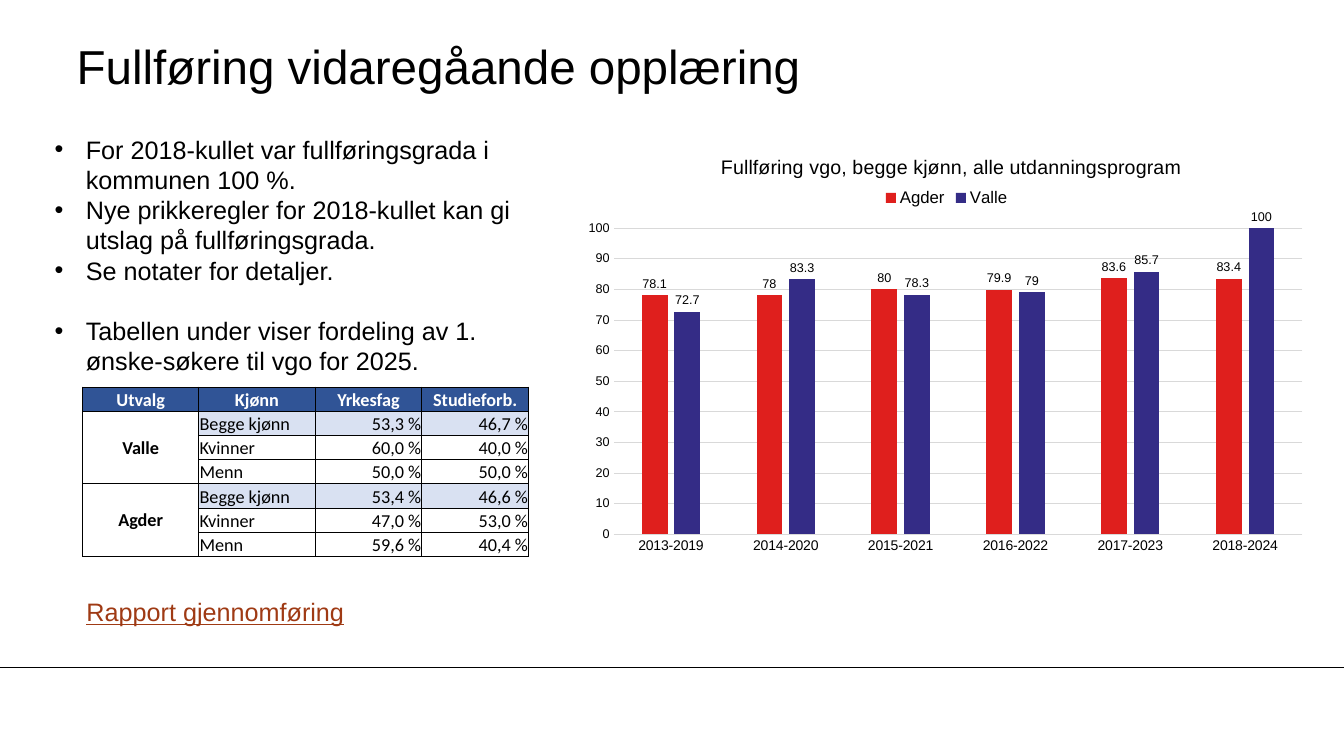
"""Build the slide on completion of upper secondary education."""
import pptx
import pptx.chart.data
import pptx.dml.color
import pptx.enum.chart
import pptx.enum.shapes
import pptx.enum.text
import pptx.oxml
import pptx.oxml.ns
import pptx.util
from lxml import etree

Cm, Pt = pptx.util.Cm, pptx.util.Pt
Align = pptx.enum.text.PP_ALIGN
Anchor = pptx.enum.text.MSO_ANCHOR
qn = pptx.oxml.ns.qn


def color(value):
    return pptx.dml.color.RGBColor.from_string(value)


def style(font, size, value="000000", name="Arial", bold=False):
    font.size = Pt(size)
    font.name = name
    font.bold = bold
    font.color.rgb = color(value)


deck = pptx.Presentation()
deck.slide_width, deck.slide_height = Cm(33.87), Cm(19.05)
page = deck.slides.add_slide(deck.slide_layouts[1])

rule = page.shapes.add_connector(
    pptx.enum.shapes.MSO_CONNECTOR.STRAIGHT, Cm(0), Cm(16.81), Cm(33.87), Cm(16.81))
rule.line.color.rgb = color("000000")
rule.line.width = Pt(0.75)
etree.SubElement(rule._element.spPr, qn("a:effectLst"))

title = page.shapes.title
title.left, title.top, title.width, title.height = Cm(1.93), Cm(0.69), Cm(28.19), Cm(1.9)
frame = title.text_frame
frame.margin_left = frame.margin_right = frame.margin_top = frame.margin_bottom = 0
frame.vertical_anchor = Anchor.MIDDLE
frame.auto_size = pptx.enum.text.MSO_AUTO_SIZE.NONE
frame.text = "Fullføring vidaregåande opplæring"
frame.paragraphs[0].alignment = Align.LEFT
style(frame.paragraphs[0].runs[0].font, 34)

points = [
    ("For 2018-kullet var fullføringsgrada i kommunen 100 %.", 0),
    ("Nye prikkeregler for 2018-kullet kan gi utslag på fullføringsgrada.", 0),
    ("Se notater for detaljer.", 0),
    ("Tabellen under viser fordeling av 1. ønske-søkere til vgo for 2025.", 21.6),
]
body = page.placeholders[1]
body.left, body.top, body.width, body.height = Cm(1.12), Cm(3.25), Cm(13.13), Cm(6.4)
frame = body.text_frame
frame.auto_size = pptx.enum.text.MSO_AUTO_SIZE.NONE
frame.text = "\n".join(text for text, gap in points)
for para, (text, gap) in zip(frame.paragraphs, points):
    properties = para._p.get_or_add_pPr()
    properties.set("marL", str(Cm(0.79)))
    properties.set("indent", str(-Cm(0.79)))
    etree.SubElement(properties, qn("a:buChar")).set("char", "•")
    para.space_before = Pt(gap)
    para.line_spacing = Pt(21.6)
    style(para.runs[0].font, 18)

rows = [
    ("Utvalg", "Kjønn", "Yrkesfag", "Studieforb."),
    ("Valle", "Begge kjønn", "53,3 %", "46,7 %"),
    ("", "Kvinner", "60,0 %", "40,0 %"),
    ("", "Menn", "50,0 %", "50,0 %"),
    ("Agder", "Begge kjønn", "53,4 %", "46,6 %"),
    ("", "Kvinner", "47,0 %", "53,0 %"),
    ("", "Menn", "59,6 %", "40,4 %"),
]
table = page.shapes.add_table(
    len(rows), 4, Cm(2.08), Cm(9.75), Cm(11.24), Cm(4.3)).table
for column, width in zip(table.columns, (2.93, 2.93, 2.69, 2.69)):
    column.width = Cm(width)
for row in table.rows:
    row.height = Cm(0.61)
for first in (1, 4):
    table.cell(first, 0).merge(table.cell(first + 2, 0))
alignments = (Align.CENTER, Align.LEFT, Align.RIGHT, Align.RIGHT)
for row_index, texts in enumerate(rows):
    for column_index, text in enumerate(texts):
        header = row_index == 0
        group = column_index == 0
        cell = table.cell(row_index, column_index)
        cell.margin_left = cell.margin_right = cell.margin_top = Cm(0.02)
        cell.margin_bottom = 0
        cell.vertical_anchor = Anchor.MIDDLE if group and not header else Anchor.BOTTOM
        for side in ("lnL", "lnR", "lnT", "lnB"):
            border = etree.SubElement(
                cell._tc.get_or_add_tcPr(), qn("a:" + side), w=str(Pt(0.5)))
            fill = etree.SubElement(border, qn("a:solidFill"))
            etree.SubElement(fill, qn("a:srgbClr"), val="000000")
        shade = "FFFFFF"
        if header:
            shade = "305496"
        elif texts[1] == "Begge kjønn" and not group:
            shade = "D9E1F2"
        cell.fill.solid()
        cell.fill.fore_color.rgb = color(shade)
        if text:
            cell.text_frame.text = text
            para = cell.text_frame.paragraphs[0]
            para.alignment = Align.CENTER if header else alignments[column_index]
            style(para.runs[0].font, 13, "FFFFFF" if header else "000000",
                  "Calibri", header or group)

report = page.shapes.add_textbox(Cm(1.93), Cm(14.91), Cm(7.14), Cm(1.02))
report.text_frame.word_wrap = True
report.text_frame.text = "Rapport gjennomføring"
span = report.text_frame.paragraphs[0].runs[0]
style(span.font, 18, "9F3A14")
span.font.underline = True

data = pptx.chart.data.CategoryChartData()
data.categories = [f"{year}-{year + 6}" for year in range(2013, 2019)]
data.add_series("Agder", (78.1, 78, 80, 79.9, 83.6, 83.4))
data.add_series("Valle", (72.7, 83.3, 78.3, 79, 85.7, 100))
chart = page.shapes.add_chart(
    pptx.enum.chart.XL_CHART_TYPE.COLUMN_CLUSTERED,
    Cm(14.53), Cm(3.25), Cm(18.67), Cm(10.87), data).chart
style(chart.font, 10)
chart.has_title = True
chart.chart_title.text_frame.text = "Fullføring vgo, begge kjønn, alle utdanningsprogram"
style(chart.chart_title.text_frame.paragraphs[0].runs[0].font, 14)
chart.has_legend = True
chart.legend.position = pptx.enum.chart.XL_LEGEND_POSITION.TOP
chart.legend.include_in_layout = False
style(chart.legend.font, 12)

plot = chart.plots[0]
plot.gap_width, plot.overlap = 219, -27
plot.vary_by_categories = False
for series, shade in zip(plot.series, ("DF1F1D", "342C86")):
    series.format.fill.solid()
    series.format.fill.fore_color.rgb = color(shade)
    labels = series.data_labels
    labels.show_value = True
    labels.position = pptx.enum.chart.XL_LABEL_POSITION.OUTSIDE_END
    style(labels.font, 9)

values, categories = chart.value_axis, chart.category_axis
values.minimum_scale, values.maximum_scale, values.major_unit = 0, 100, 10
values.tick_labels.number_format = "#,##0"
values.tick_labels.number_format_is_linked = False
values.format.line.fill.background()
for axis, size in ((values, 9), (categories, 10)):
    axis.major_tick_mark = pptx.enum.chart.XL_TICK_MARK.NONE
    style(axis.tick_labels.font, size)
for line in (values.major_gridlines.format.line, categories.format.line):
    line.color.rgb = color("D9D9D9")
    line.width = Pt(0.75)

space = chart._chartSpace
places = [
    ("c:title", {"x": 0.19, "y": 0.05}),
    ("c:legend", {"x": 0.41, "y": 0.13}),
    ("c:plotArea", {"x": 0.05, "y": 0.23, "w": 0.93, "h": 0.71}),
]
for tag, place in places:
    part = space.chart.find(qn(tag))
    for old in part.findall(qn("c:layout")):
        part.remove(old)
    layout = etree.Element(qn("c:layout"))
    part.insert(0 if tag == "c:plotArea" else 1, layout)
    manual = etree.SubElement(layout, qn("c:manualLayout"))
    if tag == "c:plotArea":
        etree.SubElement(manual, qn("c:layoutTarget"), val="inner")
    for key in ("x", "y"):
        etree.SubElement(manual, qn(f"c:{key}Mode"), val="edge")
    for key, value in place.items():
        etree.SubElement(manual, qn("c:" + key), val=str(value))

deck.save("out.pptx")
